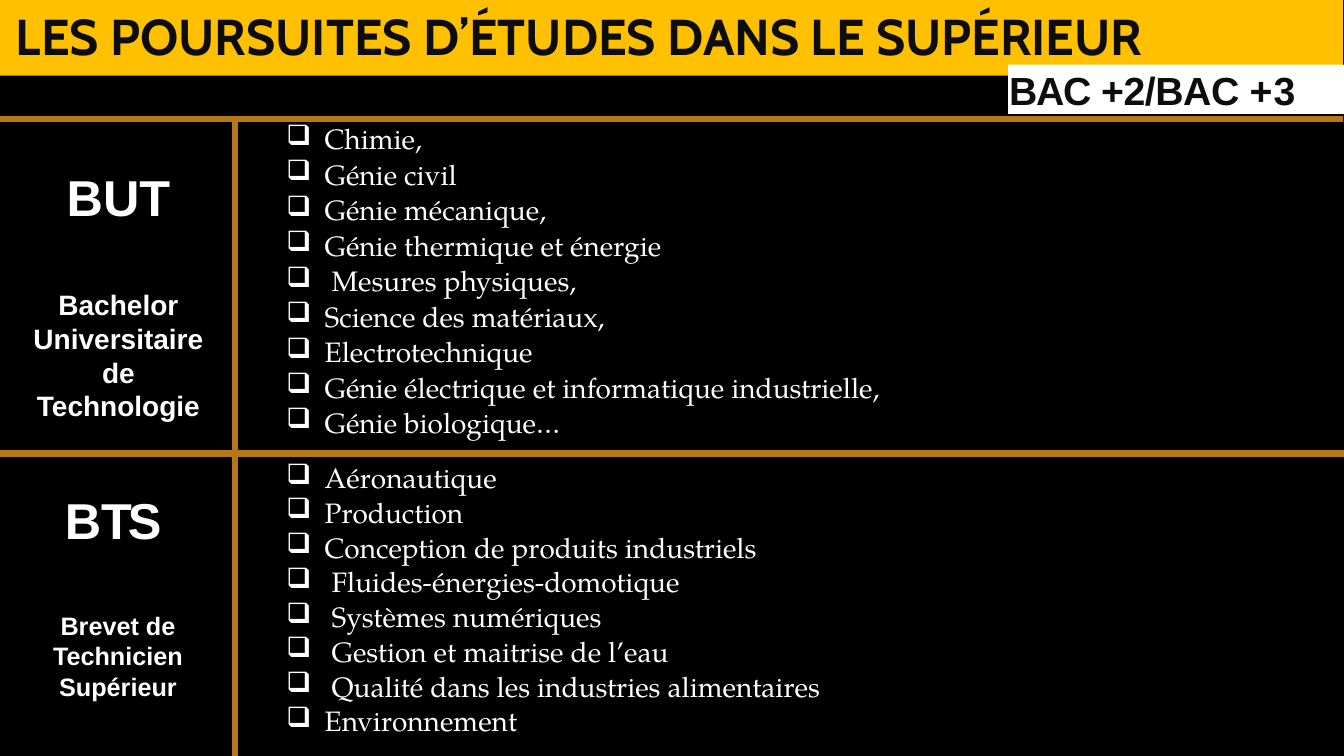
from dataclasses import dataclass

from lxml import etree
from pptx import Presentation
from pptx.dml.color import RGBColor
from pptx.enum.shapes import MSO_CONNECTOR, MSO_SHAPE
from pptx.enum.text import MSO_ANCHOR, MSO_AUTO_SIZE, PP_ALIGN
from pptx.oxml.ns import qn
from pptx.util import Emu, Pt

STRAIGHT = MSO_CONNECTOR.STRAIGHT
RECTANGLE = MSO_SHAPE.RECTANGLE
TOP, MIDDLE = MSO_ANCHOR.TOP, MSO_ANCHOR.MIDDLE
LEFT, CENTER = PP_ALIGN.LEFT, PP_ALIGN.CENTER
FIXED_SIZE = MSO_AUTO_SIZE.NONE

BLACK = RGBColor(0x00, 0x00, 0x00)
INK = RGBColor(0x0D, 0x0D, 0x0D)
WHITE = RGBColor(0xFF, 0xFF, 0xFF)
AMBER = RGBColor(0xFF, 0xC0, 0x00)
BRONZE = RGBColor(0xB5, 0x77, 0x1A)

PX = 9144
PAGE_WIDTH, PAGE_HEIGHT = 1333, 750
TITLE_FONT, LABEL_FONT, LIST_FONT = "Cabin", "Arial", "TeX Gyre Pagella"


@dataclass(frozen=True)
class Area:
    left: int
    top: int
    width: int
    height: int

    def emu(self) -> list[Emu]:
        return [Emu(side * PX) for side in (self.left, self.top, self.width, self.height)]


@dataclass(frozen=True)
class Piece:
    text: str
    spacing: float = 0


@dataclass(frozen=True)
class Diploma:
    label_area: Area
    acronym: tuple[Piece, ...]
    meaning: str
    meaning_size: int
    list_area: Area
    list_gap: float
    subjects: tuple[str, ...]


@dataclass(frozen=True)
class Rule:
    start: tuple[int, int]
    end: tuple[int, int]


DIPLOMAS = (
    Diploma(
        Area(21, 164, 192, 322),
        (Piece("B", -2.7), Piece("U", -1.9), Piece("T", -4.8)),
        "Bachelor Universitaire de Technologie",
        20,
        Area(283, 119, 1033, 316),
        1.3,
        (
            "Chimie,",
            "Génie civil",
            "Génie mécanique,",
            "Génie thermique et énergie",
            " Mesures physiques,",
            "Science des matériaux,",
            "Electrotechnique",
            "Génie électrique et informatique industrielle,",
            "Génie biologique…",
        ),
    ),
    Diploma(
        Area(27, 484, 179, 216),
        (Piece("B", -2.7), Piece("TS ", -3)),
        "Brevet de Technicien Supérieur",
        18,
        Area(283, 455, 1050, 281),
        0.8,
        (
            "Aéronautique",
            "Production",
            "Conception de produits industriels",
            " Fluides-énergies-domotique",
            " Systèmes numériques",
            " Gestion et maitrise de l’eau",
            " Qualité dans les industries alimentaires",
            "Environnement",
        ),
    ),
)
LEVELS = (Piece("BAC ", -0.9), Piece("+2/BAC ", -0.3), Piece("+3", 0.7))
RULES = (
    Rule((233, 117), (233, PAGE_HEIGHT)),
    Rule((0, 450), (PAGE_WIDTH, 450)),
    Rule((-2, 118), (1332, 118)),
)


def prepare_frame(frame, *, anchor=TOP, inset_top: int = 2) -> None:
    frame.word_wrap = True
    frame.auto_size = FIXED_SIZE
    frame.vertical_anchor = anchor
    frame.margin_left = frame.margin_right = frame.margin_bottom = 0
    frame.margin_top = Emu(inset_top * PX)


def write_para(para, pieces: tuple[Piece, ...], *, font: str, size: int, color: RGBColor,
               bold: bool = False, align=LEFT, before: float = 0, margin: int = 1,
               indent: int = 0, bullet: str = "") -> None:
    para.alignment = align
    para.space_before = Pt(before)
    properties = para._p.get_or_add_pPr()
    properties.set("marL", str(margin * PX))
    properties.set("indent", str(indent * PX))
    if bullet:
        etree.SubElement(properties, qn("a:buChar")).set("char", bullet)
    for piece in pieces:
        span = para.add_run()
        span.text = piece.text
        span.font.name = font
        span.font.size = Pt(size)
        span.font.bold = bold
        span.font.color.rgb = color
        if piece.spacing:
            span.font._element.set("spc", str(round(piece.spacing * 100)))


def add_block(page, area: Area, color: RGBColor):
    block = page.shapes.add_shape(RECTANGLE, *area.emu())
    block.shadow.inherit = False
    block.fill.solid()
    block.fill.fore_color.rgb = color
    block.line.fill.background()
    return block


def add_heading(page) -> None:
    band = add_block(page, Area(-2, 0, 1334, 75), AMBER)
    title = page.shapes.title
    title.left, title.top, title.width, title.height = Area(3, 3, 1142, 62).emu()
    title.element.addprevious(band.element)
    prepare_frame(title.text_frame, anchor=MIDDLE)
    write_para(title.text_frame.paragraphs[0],
               (Piece("LES POURSUITES D’ÉTUDES DANS LE SUPÉRIEUR"),),
               font=TITLE_FONT, size=36, color=INK, bold=True, align=CENTER, before=1.3)
    tag = add_block(page, Area(1000, 64, 333, 49), WHITE)
    prepare_frame(tag.text_frame)
    write_para(tag.text_frame.paragraphs[0], LEVELS, font=LABEL_FONT, size=28,
               color=INK, bold=True, before=1.3)


def add_diploma(page, diploma: Diploma) -> None:
    label = page.shapes.add_textbox(*diploma.label_area.emu()).text_frame
    prepare_frame(label, inset_top=1)
    write_para(label.paragraphs[0], diploma.acronym, font=LABEL_FONT, size=36,
               color=WHITE, bold=True, align=CENTER, before=1.1)
    write_para(label.add_paragraph(), (Piece(diploma.meaning),), font=LABEL_FONT,
               size=diploma.meaning_size, color=WHITE, bold=True, align=CENTER, before=43.6)
    listing = page.shapes.add_textbox(*diploma.list_area.emu()).text_frame
    prepare_frame(listing)
    for index, subject in enumerate(diploma.subjects):
        para = listing.add_paragraph() if index else listing.paragraphs[0]
        write_para(para, (Piece(subject),), font=LIST_FONT, size=20, color=WHITE,
                   before=diploma.list_gap, margin=39, indent=-38, bullet="❑")


def add_rule(page, rule: Rule) -> None:
    ends = [Emu(value * PX) for value in rule.start + rule.end]
    line = page.shapes.add_connector(STRAIGHT, *ends)
    line.line.color.rgb = BRONZE
    line.line.width = Pt(4.75)
    etree.SubElement(line.element.spPr, qn("a:effectLst"))


def main() -> None:
    deck = Presentation()
    deck.slide_width = Emu(PAGE_WIDTH * PX)
    deck.slide_height = Emu(PAGE_HEIGHT * PX)
    page = deck.slides.add_slide(deck.slide_layouts.get_by_name("Title Only"))
    page.background.fill.solid()
    page.background.fill.fore_color.rgb = BLACK
    add_heading(page)
    for diploma in DIPLOMAS:
        add_diploma(page, diploma)
    for rule in RULES:
        add_rule(page, rule)
    deck.save("out.pptx")


if __name__ == "__main__":
    main()
